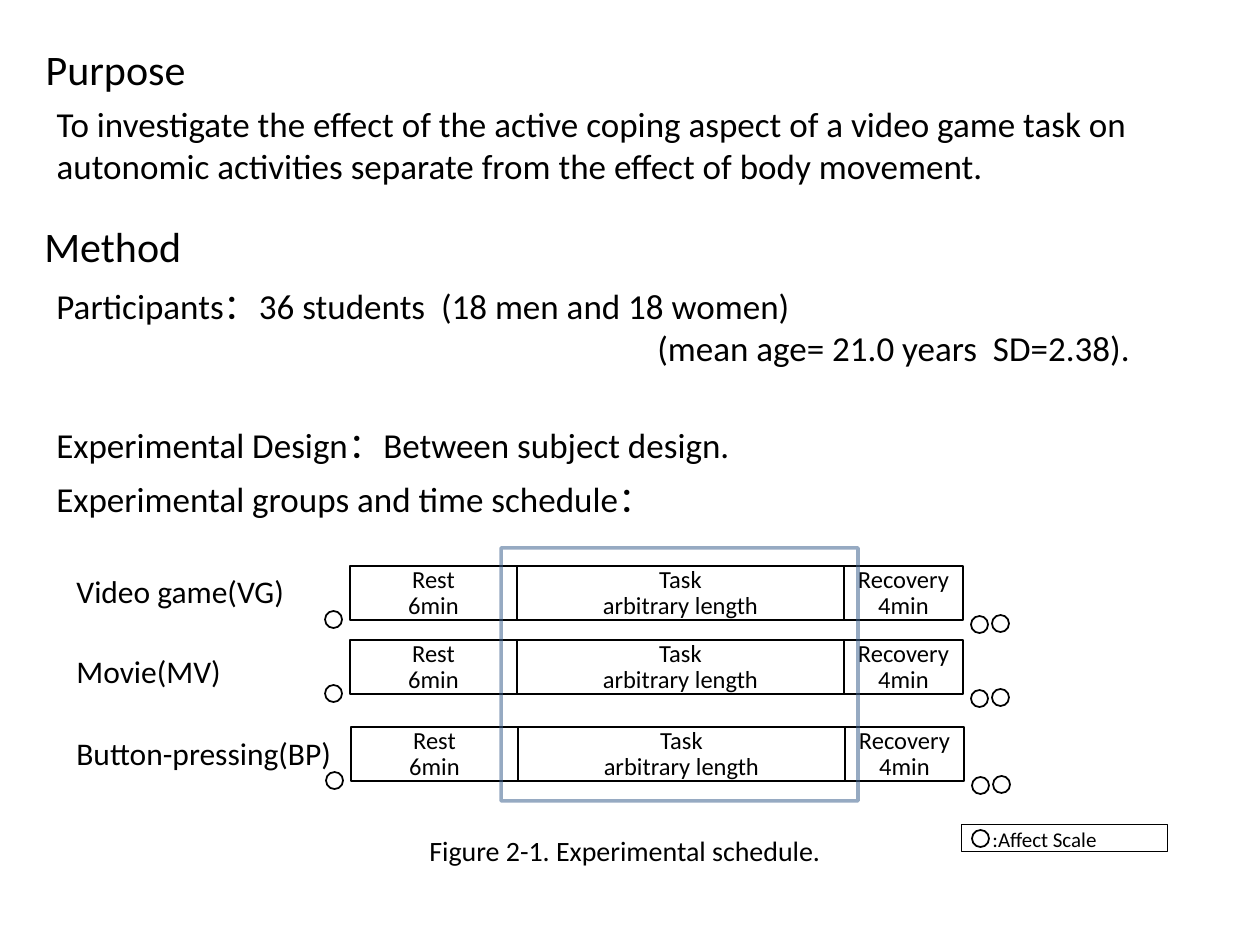
from dataclasses import dataclass
from itertools import accumulate

from lxml.etree import SubElement
from pptx import Presentation
from pptx.dml.color import RGBColor
from pptx.enum.shapes import MSO_SHAPE
from pptx.enum.text import MSO_ANCHOR, MSO_AUTO_SIZE, PP_ALIGN
from pptx.oxml.ns import qn
from pptx.util import Pt


@dataclass(frozen=True)
class Theme:
    font: str = "Calibri"
    ink: str = "000000"
    paper: str = "FFFFFF"
    frame: str = "3A5F8C"
    frame_alpha: int = 53
    heading: int = 24
    body: int = 20
    group: int = 18
    caption: int = 16
    phase: int = 14
    legend: int = 12


THEME = Theme()
EMU_PER_PX = 914400 / 126

# Content: lines, (left, top, width, height) in px
PURPOSE = (["Purpose"], (33, 37, 166, 63))
AIM = (["To investigate the effect of the active coping aspect of a video game "
        "task on autonomic activities separate from the effect of body movement."],
       (44, 96, 1121, 97))
METHOD = (["Method"], (32, 214, 164, 63))
PARTICIPANTS = (["Participants：36 students  (18 men and 18 women)",
                 "(mean age= 21.0 years  SD=2.38)."], (44, 278, 1121, 97))
AGE_INDENT = 601
DESIGN = (["Experimental Design：Between subject design."], (44, 417, 731, 55))
SCHEDULE = (["Experimental groups and time schedule："], (44, 471, 745, 55))
CAPTION = (["Figure 2-1. Experimental schedule."], (417, 827, 427, 47))
LEGEND = ([":Affect Scale"], (980, 820, 131, 38))
LEGEND_BOX = (961, 824, 206, 28)
LEGEND_MARK = (972, 830)

# Group name, label top, label width, row left, row top
GROUPS = [
    ("Video game(VG)", 566, 236, 350, 566),
    ("Movie(MV)", 646, 171, 350, 640),
    ("Button-pressing(BP)", 728, 284, 351, 727),
]
LABEL_LEFT, LABEL_HEIGHT = 64, 50
PHASES = [("Rest", "6min", 167), ("Task", "arbitrary length", 327),
          ("Recovery", "4min", 119)]
PHASE_HEIGHT = 54
# Affect scale marks, measured from the row's top left corner
MARKS = [(-25, 45), (621, 50), (642, 49)]
MARK_SIZE = 17
TASK_FRAME = (501, 548, 357, 253)


def px(value):
    return round(value * EMU_PER_PX)


def place(shape, box):
    for side, value in zip(("left", "top", "width", "height"), box):
        setattr(shape, side, px(value))


def write(shape, lines, size, wrap=False, align=PP_ALIGN.LEFT,
          anchor=MSO_ANCHOR.TOP, spacing=None):
    frame = shape.text_frame
    frame.text = "\n".join(lines)
    frame_format = {"word_wrap": wrap, "vertical_anchor": anchor,
                    "auto_size": MSO_AUTO_SIZE.NONE}
    for name, value in frame_format.items():
        setattr(frame, name, value)
    paragraph_format = {"alignment": align, "line_spacing": spacing,
                        "space_before": Pt(0)}
    for paragraph in frame.paragraphs:
        for name, value in paragraph_format.items():
            setattr(paragraph, name, value)
        for run in paragraph.runs:
            run.font.name = THEME.font
            run.font.size = Pt(size)
            run.font.color.rgb = RGBColor.from_string(THEME.ink)


def indent(paragraph, left):
    properties = paragraph._p.get_or_add_pPr()
    properties.set("marL", str(px(left)))
    properties.set("indent", "0")
    return properties


def add_text(shapes, content, size, wrap=False):
    lines, box = content
    text = shapes.add_textbox(*map(px, box))
    write(text, lines, size, wrap)
    return text


def add_outline(shapes, kind, box, weight, color=THEME.ink, filled=True):
    shape = shapes.add_shape(kind, *map(px, box))
    shape.shadow.inherit = False
    if filled:
        shape.fill.solid()
        shape.fill.fore_color.rgb = RGBColor.from_string(THEME.paper)
    else:
        shape.fill.background()
    shape.line.color.rgb = RGBColor.from_string(color)
    shape.line.width = Pt(weight)
    return shape


def add_mark(shapes, left, top):
    add_outline(shapes, MSO_SHAPE.OVAL, (left, top, MARK_SIZE, MARK_SIZE), 1)


def add_row(shapes, left, top):
    widths = [width for *_, width in PHASES]
    for (name, length, width), offset in zip(PHASES, accumulate(widths, initial=0)):
        phase = add_outline(shapes, MSO_SHAPE.RECTANGLE,
                            (left + offset, top, width, PHASE_HEIGHT), 0.75)
        write(phase, [name, length], THEME.phase, align=PP_ALIGN.CENTER,
              anchor=MSO_ANCHOR.MIDDLE, spacing=Pt(15))
    for dx, dy in MARKS:
        add_mark(shapes, left + dx, top + dy)


def main():
    deck = Presentation()
    deck.slide_width, deck.slide_height = px(1260), px(945)
    slide = deck.slides.add_slide(deck.slide_layouts[1])
    shapes = slide.shapes

    # Purpose: title and body placeholders
    title, aim = slide.placeholders
    for holder, (lines, box), size, wrap in (
            (title, PURPOSE, THEME.heading, False), (aim, AIM, THEME.body, True)):
        place(holder, box)
        write(holder, lines, size, wrap)
    SubElement(indent(aim.text_frame.paragraphs[0], 0), qn("a:buNone"))

    # Method
    add_text(shapes, METHOD, THEME.heading)
    participants = add_text(shapes, PARTICIPANTS, THEME.body, wrap=True)
    indent(participants.text_frame.paragraphs[1], AGE_INDENT)
    for content in (DESIGN, SCHEDULE):
        add_text(shapes, content, THEME.body, wrap=True)

    # Legend
    legend = shapes.add_group_shape().shapes
    add_outline(legend, MSO_SHAPE.RECTANGLE, LEGEND_BOX, 0.5)
    add_mark(legend, *LEGEND_MARK)
    add_text(legend, LEGEND, THEME.legend)

    # Time schedule, one row for each group
    for name, label_top, label_width, left, top in GROUPS:
        label_box = (LABEL_LEFT, label_top, label_width, LABEL_HEIGHT)
        add_text(shapes, ([name], label_box), THEME.group)
        add_row(shapes.add_group_shape().shapes, left, top)
    add_text(shapes, CAPTION, THEME.caption)

    # Translucent frame around the task phase
    task_frame = add_outline(shapes, MSO_SHAPE.RECTANGLE, TASK_FRAME, 2,
                             THEME.frame, filled=False)
    color = task_frame.line._ln.find(".//" + qn("a:srgbClr"))
    SubElement(color, qn("a:alpha"), val=str(THEME.frame_alpha * 1000))

    deck.save("out.pptx")


if __name__ == "__main__":
    main()
